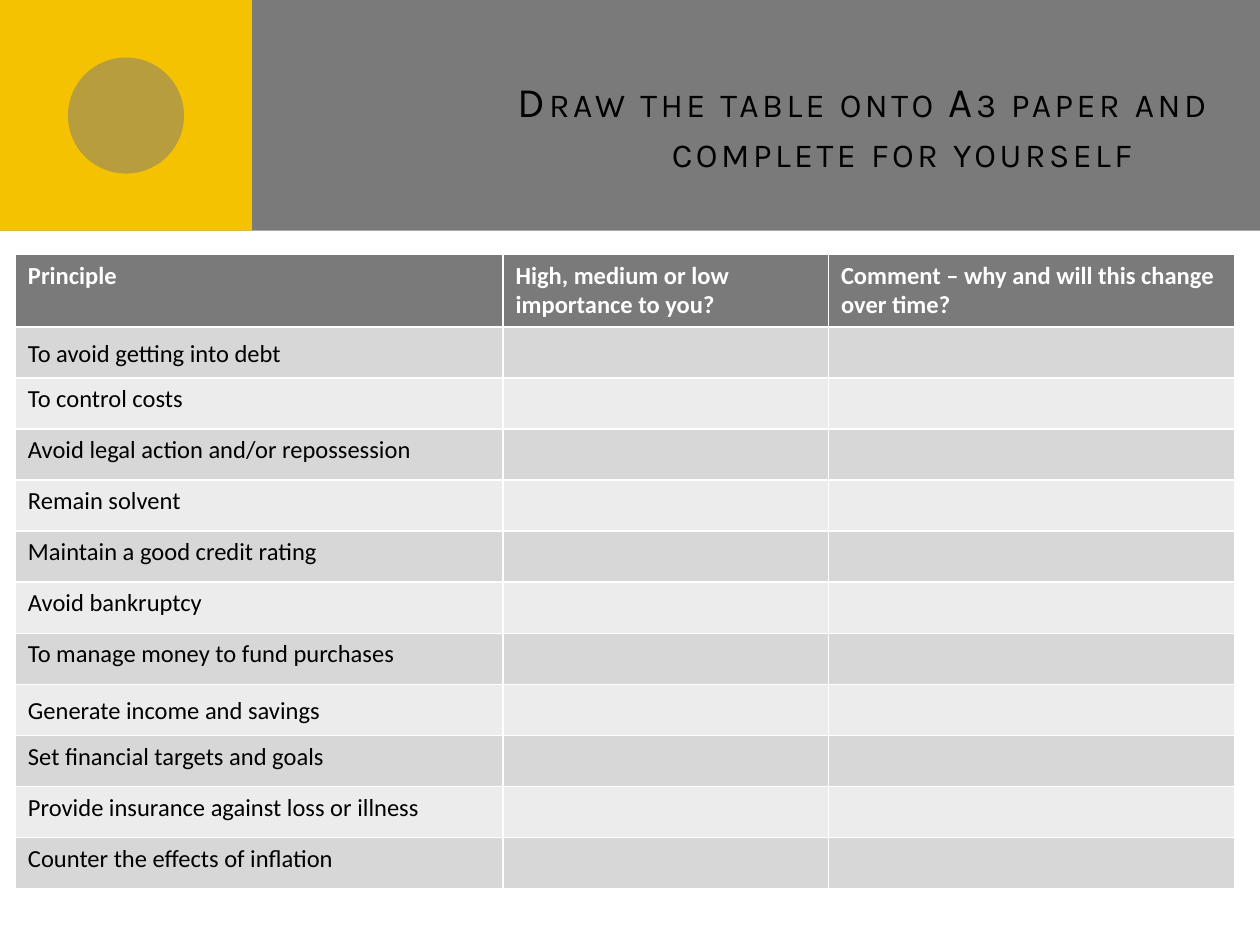
from lxml.etree import SubElement as Sub
from pptx import Presentation as Deck
from pptx.dml.color import RGBColor as Rgb
from pptx.enum.shapes import MSO_SHAPE as Kind
from pptx.enum.text import MSO_ANCHOR as Anchor, PP_ALIGN as Align
from pptx.oxml.ns import qn
from pptx.util import Cm, Pt

HUES = {"grey": "7A7A7A", "gold": "F5C201", "dark": "D7D7D7",
        "light": "ECECEC", "white": "FFFFFF", "black": "000000"}
TITLE = {"name": "Karla", "size": Pt(24), "bold": False}
HEAD = {"name": "Calibri", "size": Pt(14), "bold": True}
BODY = {**HEAD, "bold": False}

HEADS = ["Principle", "High, medium or low importance to you?",
         "Comment – why and will this change over time?"]
AIMS = ["To avoid getting into debt", "To control costs",
        "Avoid legal action and/or repossession", "Remain solvent",
        "Maintain a good credit rating", "Avoid bankruptcy",
        "To manage money to fund purchases", "Generate income and savings",
        "Set financial targets and goals",
        "Provide insurance against loss or illness",
        "Counter the effects of inflation"]
LOOSE = {"To avoid getting into debt", "Generate income and savings"}


class Page:
    def __init__(self, slide, hues):
        self.slide = slide
        self.hues = hues

    def hue(self, name):
        return Rgb.from_string(self.hues[name])

    def paint(self, item, name):
        item.fill.solid()
        item.fill.fore_color.rgb = self.hue(name)

    def style(self, font, look, name):
        for key, val in look.items():
            setattr(font, key, val)
        font.color.rgb = self.hue(name)

    def shape(self, kind, box, name, alpha=None):
        item = self.slide.shapes.add_shape(kind, *map(Cm, box))
        item.shadow.inherit = False
        item.line.fill.background()
        self.paint(item, name)
        if alpha:
            tint = item.fill._xPr.find(".//" + qn("a:srgbClr"))
            Sub(tint, qn("a:alpha"), val=str(alpha * 1000))

    def title(self, text, box):
        frame = self.slide.shapes.add_textbox(*map(Cm, box)).text_frame
        frame.word_wrap = True
        frame.vertical_anchor = Anchor.MIDDLE
        para = frame.paragraphs[0]
        para.text = text
        para.alignment = Align.RIGHT
        for run in para.runs:
            self.style(run.font, TITLE, "black")
            props = run._r.get_or_add_rPr()
            props.set("cap", "small")
            props.set("spc", "200")

    def cell(self, cell, text, look, ink, fill):
        self.paint(cell, fill)
        if text:
            para = cell.text_frame.paragraphs[0]
            para.text = text
            self.style(para.runs[0].font, look, ink)
            if text in LOOSE:
                para.line_spacing = 1.2

    def table(self, heads, aims, box, wide, top, step):
        grid = self.slide.shapes.add_table(
            len(aims) + 1, len(heads), *map(Cm, box)).table
        for col, width in zip(grid.columns, wide):
            col.width = Cm(width)
        for num, row in enumerate(grid.rows):
            row.height = Cm(step if num else top)
        for spot, text in zip(grid.rows[0].cells, heads):
            self.cell(spot, text, HEAD, "white", "grey")
        for num, aim in enumerate(aims):
            fill = "light" if num % 2 else "dark"
            for col, spot in enumerate(grid.rows[num + 1].cells):
                self.cell(spot, "" if col else aim, BODY, "black", fill)


def main():
    deck = Deck()
    deck.slide_width, deck.slide_height = Cm(25.4), Cm(19.05)
    page = Page(deck.slides.add_slide(deck.slide_layouts[6]), HUES)
    page.shape(Kind.RECTANGLE, (0, 0, 25.4, 4.65), "grey")
    page.shape(Kind.RECTANGLE, (0, 0, 5.08, 4.65), "gold")
    page.shape(Kind.OVAL, (1.37, 1.16, 2.34, 2.34), "grey", 50)
    page.table(HEADS, AIMS, (0.31, 5.13, 24.6, 12.78),
               (9.83, 6.56, 8.2), 1.22, 1.03)
    page.title("Draw the table onto A3 paper and complete for yourself\v",
               (7.29, 1.32, 17.35, 3.18))
    deck.save("out.pptx")


if __name__ == "__main__":
    main()
